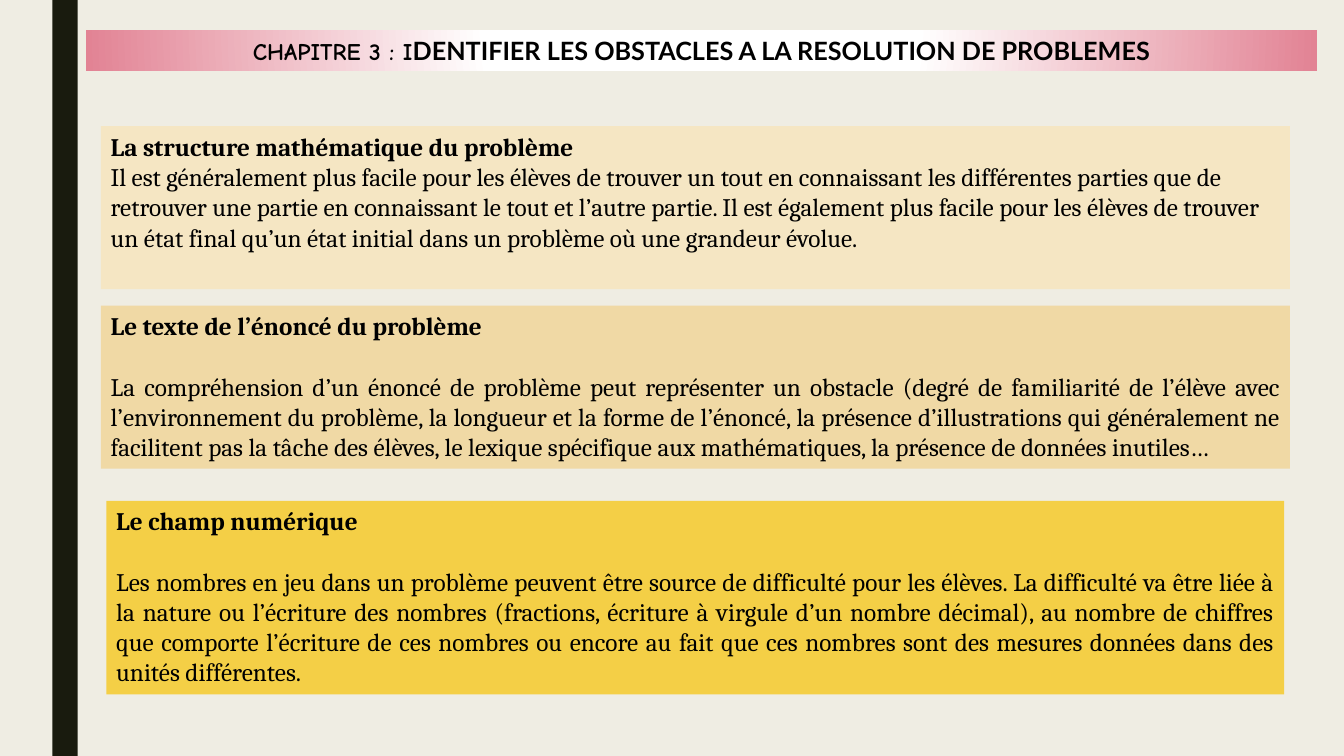
import pptx
import pptx.util
import pptx.dml.color
import pptx.enum.shapes
import pptx.enum.text
import pptx.oxml
import pptx.oxml.ns

Cm = pptx.util.Cm
Pt = pptx.util.Pt
Align = pptx.enum.text.PP_ALIGN

COLOURS = {
    "background": "EFEDE3",
    "stripe": "191B0E",
    "text": "000000",
    "white": "FFFFFF",
    "pink": "E28394",
    "structure": "F5E6C3",
    "statement": "F0D9A5",
    "numbers": "F4CF46",
}

# Each section: colour, (left, top, width, height) in cm, gap after heading in pt,
# heading, body alignment, body
SECTIONS = [
    ("structure", (2.54, 3.18, 29.97, 4.11), 0,
     "La structure mathématique du problème", Align.LEFT,
     "Il est généralement plus facile pour les élèves de trouver un tout en connaissant "
     "les différentes parties que de retrouver une partie en connaissant le tout et "
     "l’autre partie. Il est également plus facile pour les élèves de trouver un état "
     "final qu’un état initial dans un problème où une grandeur évolue."),
    ("statement", (2.54, 7.7, 29.97, 4.11), 21.5,
     "Le texte de l’énoncé du problème", Align.JUSTIFY,
     "La compréhension d’un énoncé de problème peut représenter un obstacle (degré de "
     "familiarité de l’élève avec l’environnement du problème, la longueur et la forme "
     "de l’énoncé, la présence d’illustrations qui généralement ne facilitent pas la "
     "tâche des élèves, le lexique spécifique aux mathématiques, la présence de données "
     "inutiles…"),
    ("numbers", (2.68, 12.62, 29.68, 4.88), 21.5,
     "Le champ numérique", Align.JUSTIFY,
     "Les nombres en jeu dans un problème peuvent être source de difficulté pour les "
     "élèves. La difficulté va être liée à la nature ou l’écriture des nombres "
     "(fractions, écriture à virgule d’un nombre décimal), au nombre de chiffres que "
     "comporte l’écriture de ces nombres ou encore au fait que ces nombres sont des "
     "mesures données dans des unités différentes."),
]


def rgb(name):
    return pptx.dml.color.RGBColor.from_string(COLOURS[name])


def add_box(page, area, colour):
    """Add a plain rectangle whose text starts at the top left."""
    box = page.shapes.add_shape(
        pptx.enum.shapes.MSO_SHAPE.RECTANGLE, *(Cm(length) for length in area))
    box.shadow.inherit = False
    box.fill.solid()
    box.fill.fore_color.rgb = rgb(colour)
    box.line.fill.background()
    frame_format = {"word_wrap": True, "vertical_anchor": pptx.enum.text.MSO_ANCHOR.TOP}
    for name, value in frame_format.items():
        setattr(box.text_frame, name, value)
    return box


def add_span(para, text, **font_format):
    span = para.add_run()
    span.text = text
    for name, value in font_format.items():
        setattr(span.font, name, value)
    span.font.color.rgb = rgb("text")


def set_radial_gradient(box, stops):
    """Replace the fill by a circular gradient centred above the box."""
    marks = "".join(
        f'<a:gs pos="{position * 1000}"><a:srgbClr val="{COLOURS[colour]}"/></a:gs>'
        for position, colour in stops)
    gradient = pptx.oxml.parse_xml(
        f'<a:gradFill {pptx.oxml.ns.nsdecls("a")} rotWithShape="1"><a:gsLst>{marks}</a:gsLst>'
        '<a:path path="circle">'
        '<a:fillToRect l="50000" t="-80000" r="50000" b="180000"/>'
        '</a:path></a:gradFill>')
    properties = box.element.spPr
    solid = properties.find(pptx.oxml.ns.qn("a:solidFill"))
    properties.replace(solid, gradient)


def add_title(page):
    box = add_box(page, (2.16, 0.76, 31.04, 1.02), "white")
    set_radial_gradient(box, [(0, "white"), (35, "white"), (100, "pink")])
    para = box.text_frame.paragraphs[0]
    para.alignment = Align.CENTER
    add_span(para, "CHAPITRE 3 : I", name="Comic Neue", size=Pt(17), bold=True)
    add_span(para, "DENTIFIER LES OBSTACLES A LA RESOLUTION DE PROBLEMES",
             name="Lato", size=Pt(18), bold=True)


def add_section(page, colour, area, gap, heading, alignment, body):
    frame = add_box(page, area, colour).text_frame
    heading_para = frame.paragraphs[0]
    heading_para.alignment = Align.LEFT
    heading_para.space_after = Pt(gap)
    add_span(heading_para, heading, name="Cambria", size=Pt(18), bold=True)
    body_para = frame.add_paragraph()
    body_para.alignment = alignment
    add_span(body_para, body, name="Cambria", size=Pt(18), bold=False)


def main():
    deck = pptx.Presentation()
    deck.slide_width = Cm(33.87)
    deck.slide_height = Cm(19.05)
    page = deck.slides.add_slide(deck.slide_layouts[6])
    page.background.fill.solid()
    page.background.fill.fore_color.rgb = rgb("background")

    add_box(page, (1.32, 0, 0.64, 19.05), "stripe")
    add_title(page)
    for section in SECTIONS:
        add_section(page, *section)
    deck.save("out.pptx")


if __name__ == "__main__":
    main()
